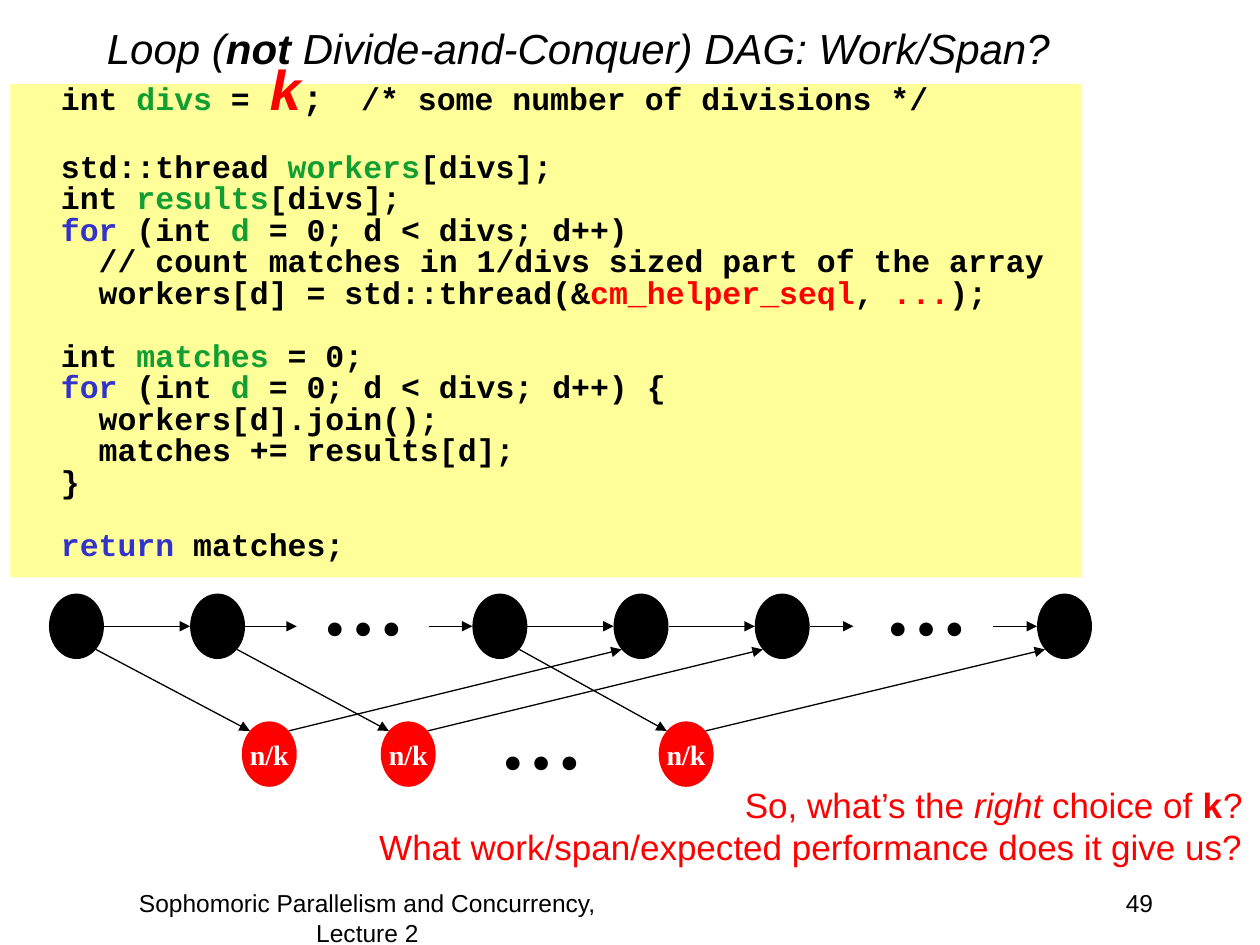
from math import sqrt

from lxml import etree
from pptx import Presentation
from pptx.dml.color import RGBColor
from pptx.enum.shapes import MSO_CONNECTOR, MSO_SHAPE
from pptx.enum.text import MSO_ANCHOR, PP_ALIGN
from pptx.oxml.ns import qn
from pptx.util import Pt

LEFT, CENTER, RIGHT = PP_ALIGN.LEFT, PP_ALIGN.CENTER, PP_ALIGN.RIGHT
TOP, MIDDLE = MSO_ANCHOR.TOP, MSO_ANCHOR.MIDDLE
OVAL, RECTANGLE = MSO_SHAPE.OVAL, MSO_SHAPE.RECTANGLE
STRAIGHT = MSO_CONNECTOR.STRAIGHT

COLORS = {"black": "000000", "white": "FFFFFF", "red": "FF0000",
          "yellow": "FFFF99", "name": "119F33", "keyword": "3333CC"}
NAME, KEYWORD, RED = ({"color": key} for key in ("name", "keyword", "red"))

NODE_WIDTH, NODE_HEIGHT = 31.4, 37.4
CODE_LINE = 18
CODE_INDENT = 21.6  # two characters of 18 pt Courier New

LOOP_HEAD = [("for", KEYWORD), (" (int ", {}), ("d", NAME)]
# Each line: indent level, blank lines before it, runs
CODE = [
    (0, 0, [("int ", {}), ("divs", NAME), (" = ", {}),
            ("k", {"color": "red", "size": 32, "italic": True}),
            (";", {"size": 20}), ("  /* some number of divisions */", {})]),
    (0, 1, [("std::thread ", {}), ("workers", NAME), ("[divs];", {})]),
    (0, 0, [("int ", {}), ("results", NAME), ("[divs];", {})]),
    (0, 0, LOOP_HEAD + [(" = 0; d < divs; d++)", {})]),
    (1, 0, [("// count matches in 1/divs sized part of the array", {})]),
    (1, 0, [("workers[d] = std::thread(&", {}), ("cm_helper_seql", RED),
            (", ", {}), ("...", RED), (");", {})]),
    (0, 1, [("int ", {}), ("matches", NAME), (" = 0;", {})]),
    (0, 0, LOOP_HEAD + [(" = 0; d < divs; d++) {", {})]),
    (1, 0, [("workers[d].join();", {})]),
    (1, 0, [("matches += results[d];", {})]),
    (0, 0, [("}", {})]),
    (0, 1, [("return", KEYWORD), (" matches;", {})]),
]


def rgb(name):
    return RGBColor.from_string(COLORS[name])


def write_text(shape, paragraphs, align=LEFT, anchor=TOP, wrap=True, **base):
    """Fill a shape with paragraphs, each a list of (text, format) runs."""
    frame = shape.text_frame
    frame.word_wrap = wrap
    frame.vertical_anchor = anchor
    for index, runs in enumerate(paragraphs):
        paragraph = frame.add_paragraph() if index else frame.paragraphs[0]
        paragraph.alignment = align
        for text, changes in runs:
            style = {"font": "Arial", "size": 14, "color": "black",
                     "bold": False, "italic": False, **base, **changes}
            run = paragraph.add_run()
            run.text = text
            run.font.name = style["font"]
            run.font.size = Pt(style["size"])
            run.font.bold = style["bold"]
            run.font.italic = style["italic"]
            run.font.color.rgb = rgb(style["color"])
    return frame


def add_text(slide, box, paragraphs, **style):
    shape = slide.shapes.add_textbox(*map(Pt, box))
    return write_text(shape, paragraphs, **style)


def add_filled(slide, kind, box, color):
    shape = slide.shapes.add_shape(kind, *map(Pt, box))
    shape.shadow.inherit = False
    shape.fill.solid()
    shape.fill.fore_color.rgb = rgb(color)
    shape.line.fill.background()
    return shape


def add_arrow(slide, start, end):
    arrow = slide.shapes.add_connector(STRAIGHT, *map(Pt, start + end))
    arrow.line.color.rgb = rgb("black")
    arrow.line.width = Pt(0.75)
    properties = arrow.line._get_or_add_ln()
    etree.SubElement(properties, qn("a:tailEnd"), type="triangle")
    etree.SubElement(arrow._element.spPr, qn("a:effectLst"))


def add_code(slide, box):
    panel = add_filled(slide, RECTANGLE, box, "yellow")
    frame = write_text(panel, [runs for _, _, runs in CODE],
                       font="Courier New", size=18, bold=True)
    frame.margin_left = Pt(7.2 + CODE_INDENT)
    for paragraph, (level, blanks, _) in zip(frame.paragraphs, CODE):
        paragraph.line_spacing = Pt(CODE_LINE)
        paragraph.space_before = Pt(blanks * CODE_LINE)
        paragraph._p.get_or_add_pPr().set("marL", str(Pt(level * CODE_INDENT)))


def add_dag(slide, box):
    left, top, width, height = box
    upper_y = top + NODE_HEIGHT / 2
    lower_y = top + height - NODE_HEIGHT / 2
    half = NODE_WIDTH / 2
    upper_step = (width - NODE_WIDTH) / 7
    upper = {slot: left + half + slot * upper_step for slot in (0, 1, 3, 4, 5, 7)}
    lower = [left + 110.2 + half + slot * 79.4 for slot in (0, 1, 3)]

    # Nodes of the main thread and of the workers
    for x in upper.values():
        add_filled(slide, OVAL, (x - half, top, NODE_WIDTH, NODE_HEIGHT), "black")
    for x in lower:
        node = add_filled(slide, OVAL, (x - half, lower_y - NODE_HEIGHT / 2,
                                        NODE_WIDTH, NODE_HEIGHT), "red")
        write_text(node, [[("n/k", {})]], align=CENTER, anchor=MIDDLE, wrap=False,
                   font="Times New Roman", size=16, bold=True, color="white")

    # Arrows along the main thread, with short ones beside the gaps
    for slot in (0, 3, 4):
        add_arrow(slide, (upper[slot] + half, upper_y),
                  (upper[slot + 1] - half, upper_y))
    for slot, length in ((1, 29.5), (5, 25)):
        x = upper[slot] + half
        add_arrow(slide, (x, upper_y), (x + length, upper_y))
    for slot in (3, 7):
        x = upper[slot] - half
        add_arrow(slide, (x - 25, upper_y), (x, upper_y))

    # Fork and join arrows meet the nodes at 45 degrees
    dx, dy = half / sqrt(2), NODE_HEIGHT / 2 / sqrt(2)
    for fork, worker, join in zip((0, 1, 3), lower, (4, 5, 7)):
        add_arrow(slide, (upper[fork] + dx, upper_y + dy),
                  (worker - dx, lower_y - dy))
        add_arrow(slide, (worker + dx, lower_y - dy),
                  (upper[join] - dx, upper_y + dy))

    # Dots for the nodes left out
    for x, y in ((148.4, -27.4), (470.2, -27.4), (250.6, 49)):
        add_text(slide, (left + x, top + y, 63.4, 65.4), [[("…", {})]],
                 wrap=False, font="Times New Roman", size=48, bold=True)


def add_question(slide, box):
    add_text(slide, box, [
        [("So, what’s the ", {}), ("right", {"italic": True}), (" choice of ", {}),
         ("k", {"font": "Courier New", "bold": True}), ("?", {})],
        [("What work/span/expected performance does it give us?", {})],
    ], align=RIGHT, size=20, color="red")


def add_title(slide, box):
    add_text(slide, box, [[("Loop (", {}), ("not", {"bold": True}),
                           (" Divide-and-Conquer) DAG: Work/Span?", {})]],
             anchor=MIDDLE, size=24, italic=True)


def add_footer(slide, box):
    left, top, width, height = box
    add_text(slide, (left, top, 324, height),
             [[("Sophomoric Parallelism and Concurrency, Lecture 2", {})]],
             align=CENTER)
    add_text(slide, (left + width - 150, top, 150, height), [[("49", {})]],
             align=RIGHT)


def main():
    presentation = Presentation()
    presentation.slide_width, presentation.slide_height = Pt(720), Pt(540)
    slide = presentation.slides.add_slide(presentation.slide_layouts[6])
    add_code(slide, (6, 48, 612, 282))
    add_title(slide, (54, -18, 612, 90))
    add_dag(slide, (28, 339.2, 596, 110.4))
    add_question(slide, (208, 444, 509.2, 55.6))
    add_footer(slide, (48, 504, 618, 36))
    presentation.save("out.pptx")


if __name__ == "__main__":
    main()
